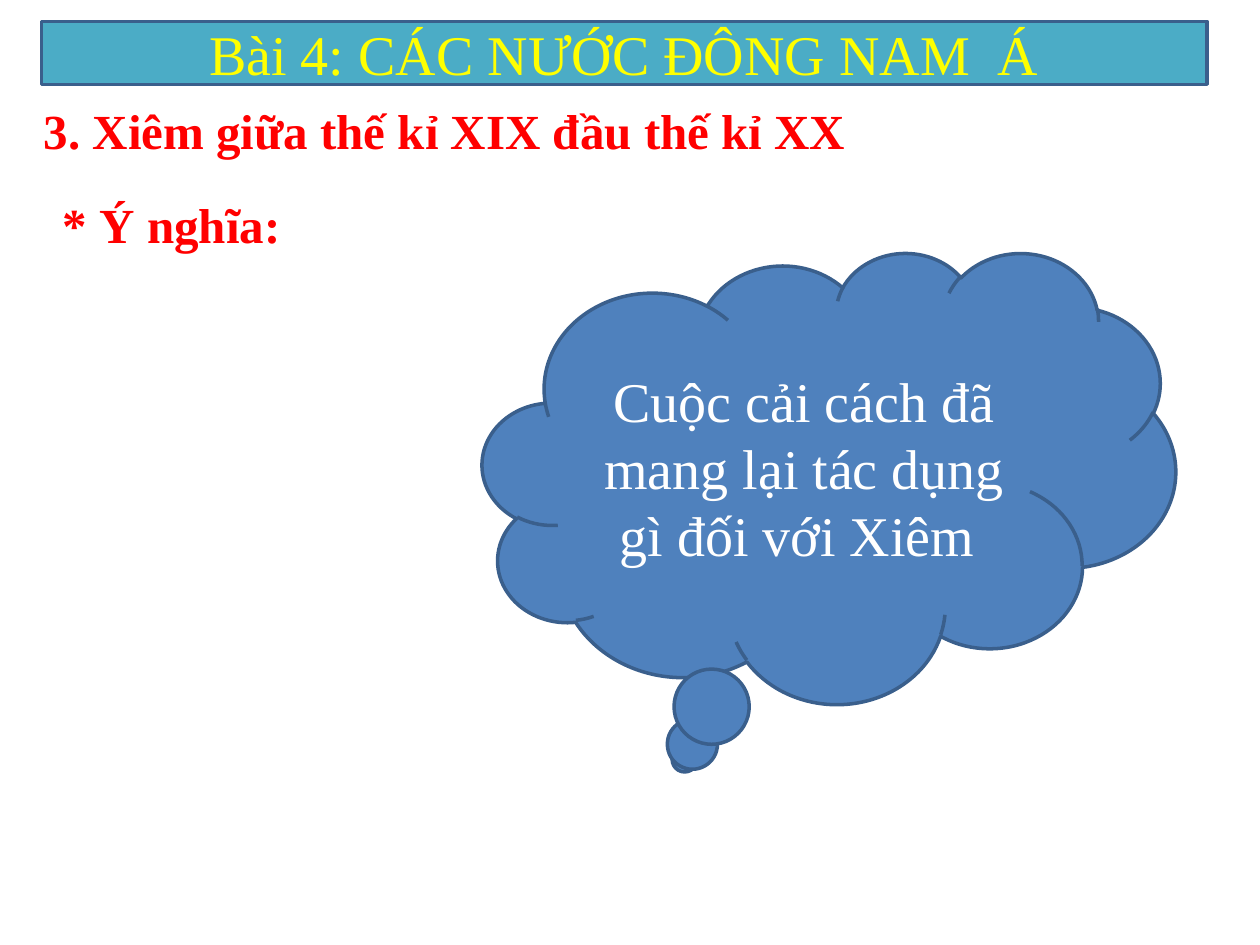
from pptx import Presentation
from pptx.dml.color import RGBColor
from pptx.enum.shapes import MSO_SHAPE
from pptx.enum.text import MSO_ANCHOR, PP_ALIGN
from pptx.util import Inches, Pt

COLORS = {
    "cloud": "4F81BD",
    "banner": "4BACC6",
    "outline": "3A5F8C",
    "heading": "FF0000",
    "title": "FFFF00",
    "question": "FFFFFF",
}
TITLE_FONT = {"name": "Times New Roman", "size": Pt(32)}
HEADING_FONT = {"name": "Times New Roman", "size": Pt(28), "bold": True}


def color(name):
    """Return the named colour of the palette."""
    return RGBColor.from_string(COLORS[name])


def write_text(shape, text, font, color_name, align, anchor):
    """Fill a shape with one formatted paragraph."""
    frame = shape.text_frame
    frame.word_wrap = True
    frame.vertical_anchor = anchor
    para = frame.paragraphs[0]
    para.alignment = align
    span = para.add_run()
    span.text = text
    for key, value in font.items():
        setattr(span.font, key, value)
    span.font.color.rgb = color(color_name)


def add_panel(page, box, kind, fill, text, text_color):
    """Add an outlined shape with centred text."""
    panel = page.shapes.add_shape(kind, *map(Inches, box))
    panel.shadow.inherit = False
    panel.fill.solid()
    panel.fill.fore_color.rgb = color(fill)
    panel.line.color.rgb = color("outline")
    panel.line.width = Pt(2)
    write_text(panel, text, TITLE_FONT, text_color, PP_ALIGN.CENTER, MSO_ANCHOR.MIDDLE)


def add_heading(page, box, text, anchor):
    """Add a bold red heading."""
    heading = page.shapes.add_textbox(*map(Inches, box))
    write_text(heading, text, HEADING_FONT, "heading", PP_ALIGN.LEFT, anchor)


def main():
    """Build the lesson slide and save it."""
    deck = Presentation()
    deck.slide_width, deck.slide_height = Inches(10), Inches(7.5)
    page = deck.slides.add_slide(deck.slide_layouts[6])
    add_panel(page, (3.83, 2, 5.5, 3.58), MSO_SHAPE.CLOUD_CALLOUT, "cloud",
              "Cuộc cải cách đã mang lại tác dụng gì đối với Xiêm ", "question")
    add_heading(page, (0.4, 1.32, 5.42, 0.92), "* Ý nghĩa:", MSO_ANCHOR.MIDDLE)
    add_panel(page, (0.33, 0.17, 9.25, 0.5), MSO_SHAPE.RECTANGLE, "banner",
              "Bài 4: CÁC NƯỚC ĐÔNG NAM  Á", "title")
    add_heading(page, (0.25, 0.75, 9, 0.57),
                "3. Xiêm giữa thế kỉ XIX đầu thế kỉ XX", MSO_ANCHOR.TOP)
    deck.save("out.pptx")


if __name__ == "__main__":
    main()
